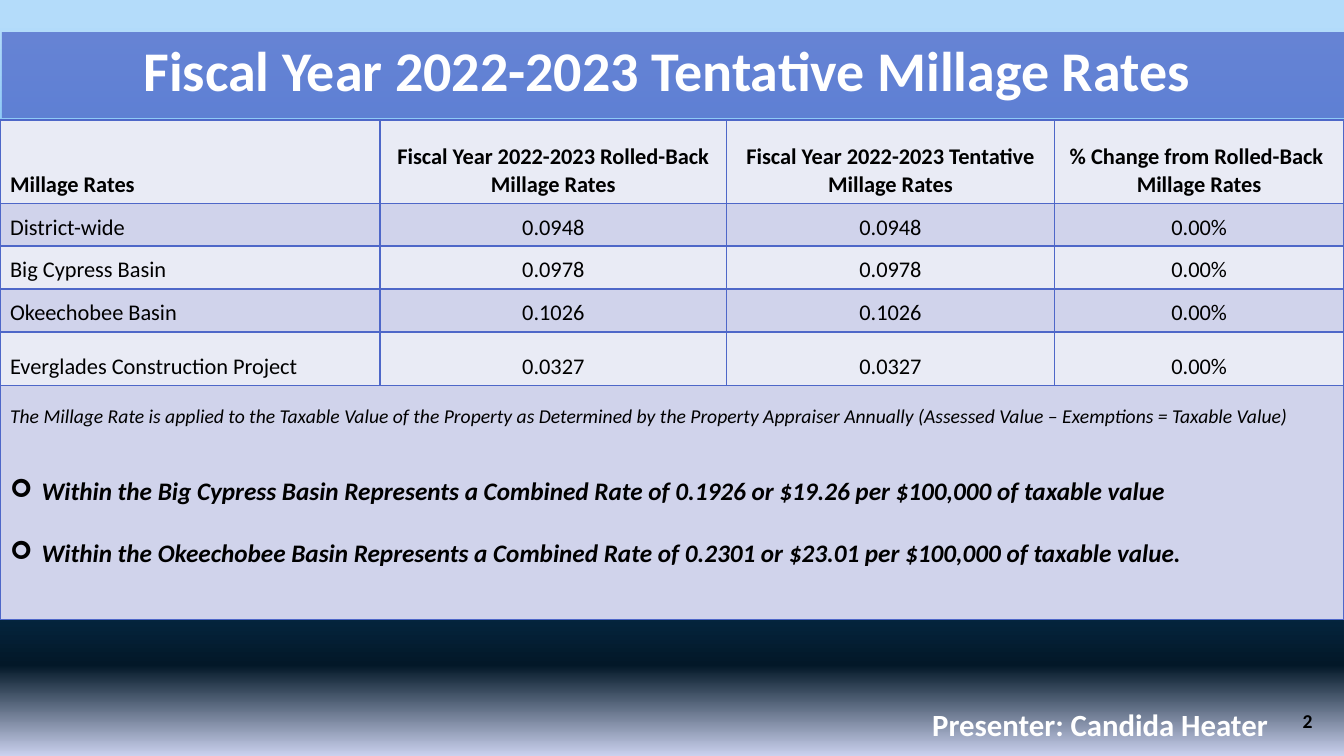
from lxml.etree import SubElement
from pptx import Presentation
from pptx.dml.color import RGBColor
from pptx.enum.text import MSO_ANCHOR, PP_ALIGN
from pptx.oxml import parse_xml
from pptx.oxml.ns import nsdecls, qn
from pptx.util import Pt

# Content
TITLE = "Fiscal Year 2022-2023 Tentative Millage Rates "
HEADS = [
    ["Millage Rates"],
    ["Fiscal Year 2022-2023 Rolled-Back", "Millage Rates"],
    ["Fiscal Year 2022-2023 Tentative", "Millage Rates"],
    ["% Change from Rolled-Back ", "Millage Rates"],
]
RATES = [
    ("District-wide", "0.0948", "0.0948", "0.00%"),
    ("Big Cypress Basin", "0.0978", "0.0978", "0.00%"),
    ("Okeechobee Basin", "0.1026", "0.1026", "0.00%"),
    ("Everglades Construction Project", "0.0327", "0.0327", "0.00%"),
]
NOTE = ("The Millage Rate is applied to the Taxable Value of the Property as Determined "
        "by the Property Appraiser Annually (Assessed Value – Exemptions = Taxable Value)")
# Bullet text and the space before it
POINTS = [
    ("Within the Big Cypress Basin Represents a Combined Rate of 0.1926 "
     "or $19.26 per $100,000 of taxable value", 34),
    ("Within the Okeechobee Basin Represents a Combined Rate of 0.2301 "
     "or $23.01 per $100,000 of taxable value.", 22),
]
SPEAKER = "Presenter: Candida Heater"
NUMBER = "2"

# Look
FONT, BLACK, WHITE, BLUE = "Calibri", "000000", "FFFFFF", "4E67C8"
BANDS = ["E9EBF5", "D0D3EB"]
STOPS = [(3, "B4DCFA"), (17, "8CC9F7"), (36, "4FADF3"), (54, "0D79CA"),
         (71, "073C65"), (88, "031828"), (100, "CAD1EE")]
COLS = [271.4, 247.7, 234, 206.9]
ROWS = [59.4, 30.7, 30.7, 30.7, 38, 167.4]


def color(code):
    return RGBColor.from_string(code)


def write(para, text, size, code=BLACK, bold=False, italic=False):
    run = para.add_run()
    run.text = text
    font = run.font
    font.name, font.size, font.bold, font.italic = FONT, Pt(size), bold, italic
    font.color.rgb = color(code)


def bullet(para, sign, indent):
    props = para._p.get_or_add_pPr()
    props.set("marL", str(Pt(indent)))
    props.set("indent", str(-Pt(indent)))
    SubElement(props, qn("a:buFont")).set("typeface", "Wingdings")
    SubElement(props, qn("a:buChar")).set("char", sign)


def border(cell):
    props = cell._tc.get_or_add_tcPr()
    for spot, side in enumerate("LRTB"):
        props.insert(spot, parse_xml(
            f'<a:ln{side} {nsdecls("a")} w="{Pt(1)}"><a:solidFill>'
            f'<a:srgbClr val="{BLUE}"/></a:solidFill></a:ln{side}>'))


def label(slide, box, text, size, code, align):
    shape = slide.shapes.add_textbox(*map(Pt, box))
    frame = shape.text_frame
    frame.word_wrap = True
    para = frame.paragraphs[0]
    para.alignment = align
    write(para, text, size, code, bold=True)
    return frame


def backdrop(slide):
    fill = slide.background.fill
    fill.gradient()
    fill.gradient_angle = 270
    stops = slide.element.find(".//" + qn("a:gsLst"))
    for old in list(stops):
        stops.remove(old)
    for place, code in STOPS:
        stop = SubElement(stops, qn("a:gs"))
        stop.set("pos", str(place * 1000))
        SubElement(stop, qn("a:srgbClr")).set("val", code)


def banner(slide):
    shape = slide.shapes.title
    shape.left, shape.top, shape.width, shape.height = map(Pt, (1.4, 23, 959, 61.2))
    shape.fill.solid()
    shape.fill.fore_color.rgb = color(BLUE)
    tint = shape._element.spPr.find(".//" + qn("a:srgbClr"))
    SubElement(tint, qn("a:alpha")).set("val", "75000")
    frame = shape.text_frame
    frame.vertical_anchor = MSO_ANCHOR.MIDDLE
    para = frame.paragraphs[0]
    para.alignment, para.line_spacing = PP_ALIGN.CENTER, 0.8
    write(para, TITLE, 40, WHITE, bold=True)


def rates(slide):
    table = slide.shapes.add_table(
        len(ROWS), len(COLS), 0, Pt(85.7), Pt(sum(COLS)), Pt(sum(ROWS))).table
    for col, width in zip(table.columns, COLS):
        col.width = Pt(width)
    for row, height in zip(table.rows, ROWS):
        row.height = Pt(height)
    last = len(ROWS) - 1
    table.cell(last, 0).merge(table.cell(last, len(COLS) - 1))

    # Bands and borders
    for r, row in enumerate(table.rows):
        for cell in row.cells:
            cell.fill.solid()
            cell.fill.fore_color.rgb = color(BANDS[r % 2])
            cell.vertical_anchor = MSO_ANCHOR.BOTTOM
            border(cell)

    # Head and rates
    grid = [HEADS] + [[[text] for text in row] for row in RATES]
    for r, row in enumerate(grid):
        for c, lines in enumerate(row):
            frame = table.cell(r, c).text_frame
            for n, line in enumerate(lines):
                para = frame.add_paragraph() if n else frame.paragraphs[0]
                para.alignment = PP_ALIGN.CENTER if c else PP_ALIGN.LEFT
                write(para, line, 16, bold=r == 0)

    # Note and bullets across the last row
    cell = table.cell(last, 0)
    cell.vertical_anchor = MSO_ANCHOR.MIDDLE
    cell.margin_bottom = Pt(25.6)
    frame = cell.text_frame
    write(frame.paragraphs[0], NOTE, 14, italic=True)
    for text, gap in POINTS:
        para = frame.add_paragraph()
        para.space_before = Pt(gap)
        bullet(para, "➢", 22.5)
        write(para, text, 18, bold=True, italic=True)


def main():
    deck = Presentation()
    deck.slide_width, deck.slide_height = Pt(960), Pt(540)
    slide = deck.slides.add_slide(deck.slide_layouts[5])
    backdrop(slide)
    banner(slide)
    rates(slide)
    # Footer
    page = label(slide, (848.9, 500.4, 95.8, 28.8), NUMBER, 14, BLACK, PP_ALIGN.RIGHT)
    page.vertical_anchor = MSO_ANCHOR.MIDDLE
    label(slide, (658.8, 500.4, 267, 33.8), SPEAKER, 22, WHITE, PP_ALIGN.LEFT)
    deck.save("out.pptx")


if __name__ == "__main__":
    main()
